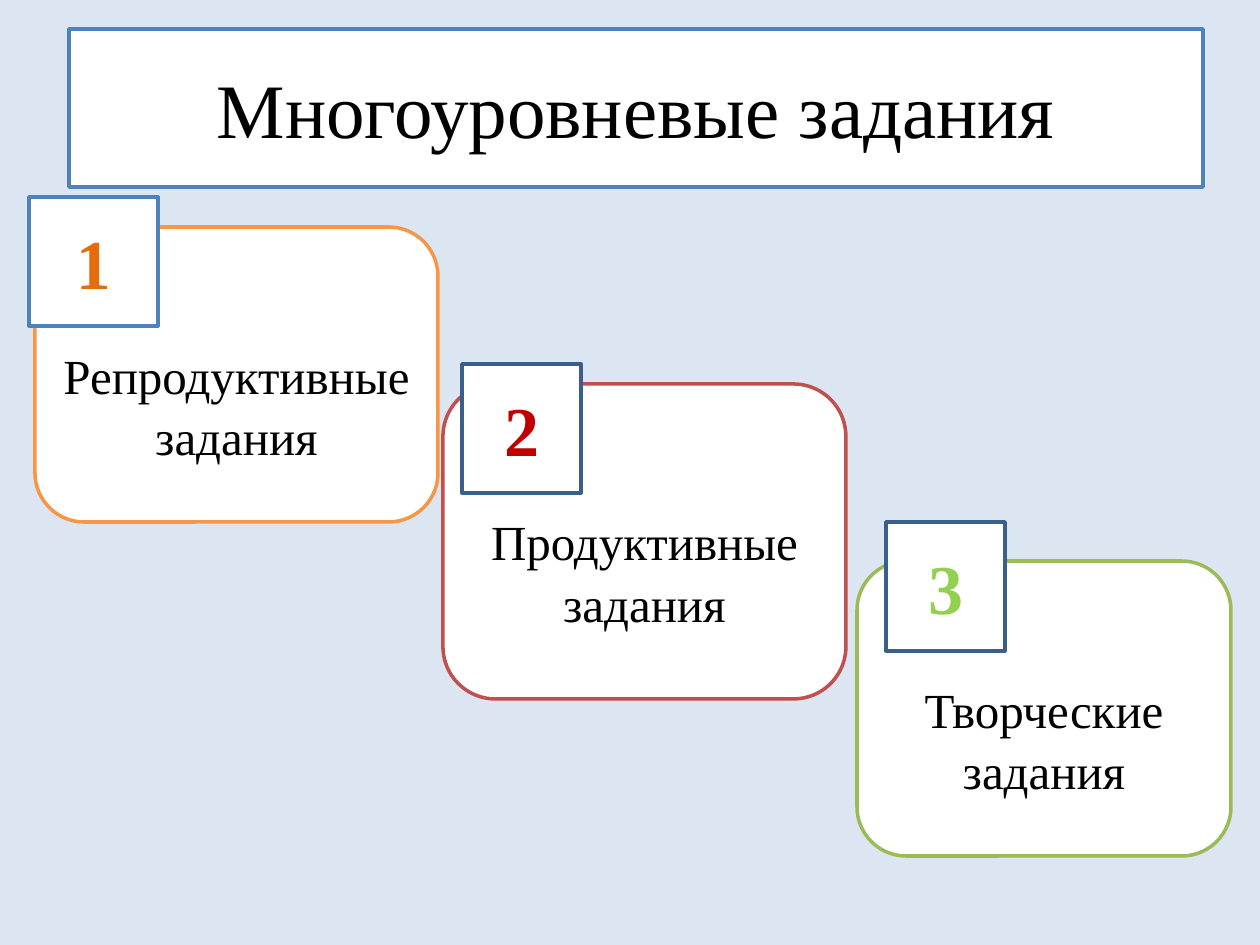
from pptx import Presentation
from pptx import util as u
from pptx.dml.color import RGBColor
from pptx.enum import shapes, text

PX_PER_INCH = 126
FONT = "Times New Roman"
BLACK = RGBColor(0x00, 0x00, 0x00)
WHITE = RGBColor(0xFF, 0xFF, 0xFF)
PALE_BLUE = RGBColor(0xDC, 0xE6, 0xF2)
BLUE = RGBColor(0x4F, 0x81, 0xBD)
DARK_BLUE = RGBColor(0x3A, 0x5F, 0x8C)
ORANGE = RGBColor(0xF7, 0x96, 0x46)
DARK_ORANGE = RGBColor(0xE4, 0x6C, 0x0A)
RED = RGBColor(0xC0, 0x50, 0x4D)
DARK_RED = RGBColor(0xC0, 0x00, 0x00)
GREEN = RGBColor(0x9B, 0xBB, 0x59)
LIGHT_GREEN = RGBColor(0x92, 0xD0, 0x50)

LEVELS = [
    ("Репродуктивные задания", (35, 227, 403, 295), ORANGE,
     (29, 197, 129, 129), BLUE, DARK_ORANGE),
    ("Продуктивные задания", (443, 384, 403, 315), RED,
     (462, 364, 119, 129), DARK_BLUE, DARK_RED),
    ("Творческие задания", (857, 561, 374, 295), GREEN,
     (886, 522, 119, 129), DARK_BLUE, LIGHT_GREEN),
]


def px(length):
    return u.Emu(round(length * u.Inches(1) / PX_PER_INCH))


def outline(panel, color):
    panel.fill.solid()
    panel.fill.fore_color.rgb = WHITE
    panel.line.color.rgb = color
    panel.line.width = u.Pt(2)


def write(panel, wording, size, color=BLACK, bold=False, top_inset=6, spacing=1.0):
    frame = panel.text_frame
    frame.word_wrap = True
    frame.auto_size = text.MSO_AUTO_SIZE.NONE
    frame.vertical_anchor = text.MSO_ANCHOR.MIDDLE
    frame.margin_top = px(top_inset)
    paragraph = frame.paragraphs[0]
    paragraph.alignment = text.PP_ALIGN.CENTER
    paragraph.line_spacing = spacing
    run = paragraph.add_run()
    run.text = wording
    run.font.name = FONT
    run.font.size = u.Pt(size)
    run.font.bold = bold
    run.font.color.rgb = color


def add_panel(slide, preset, box, color):
    panel = slide.shapes.add_shape(preset, *map(px, box))
    panel.shadow.inherit = False
    outline(panel, color)
    return panel


def set_title(slide, wording, box):
    title = slide.shapes.title
    title.left, title.top, title.width, title.height = map(px, box)
    outline(title, BLUE)
    write(title, wording, 44)


def main():
    deck = Presentation()
    deck.slide_width, deck.slide_height = px(1260), px(945)
    slide = deck.slides.add_slide(deck.slide_layouts[5])
    slide.background.fill.solid()
    slide.background.fill.fore_color.rgb = PALE_BLUE

    set_title(slide, "Многоуровневые задания", (69, 29, 1134, 158))
    for task, box, border, *_ in LEVELS:
        card = add_panel(slide, shapes.MSO_SHAPE.ROUNDED_RECTANGLE, box, border)
        write(card, task, 28, top_inset=65, spacing=1.05)
    for number, (*_, box, border, color) in enumerate(LEVELS, 1):
        badge = add_panel(slide, shapes.MSO_SHAPE.RECTANGLE, box, border)
        write(badge, str(number), 40, color=color, bold=True)

    deck.save("out.pptx")


if __name__ == "__main__":
    main()
